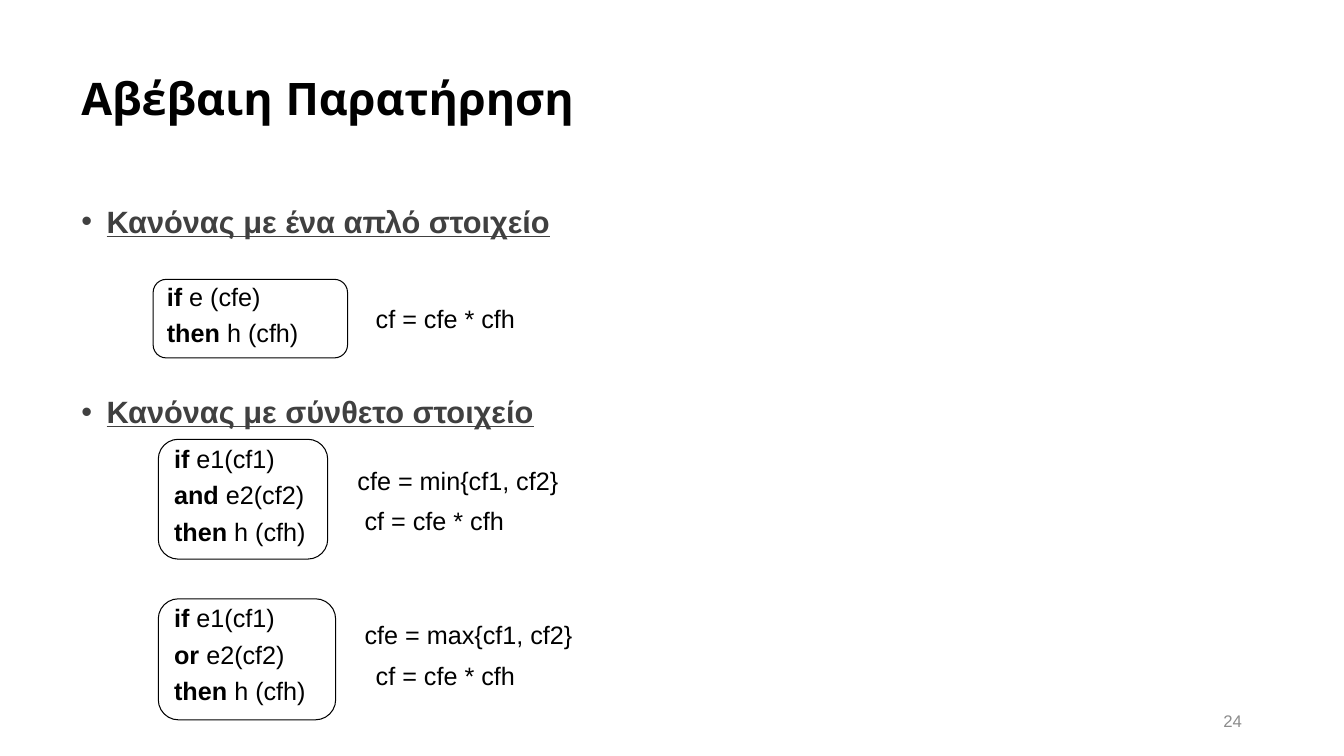
from dataclasses import dataclass

from lxml.etree import SubElement
from pptx import Presentation
from pptx.dml.color import RGBColor
from pptx.enum.shapes import MSO_SHAPE as Preset
from pptx.enum.text import MSO_ANCHOR as Anchor, PP_ALIGN as Align
from pptx.oxml.ns import qn
from pptx.slide import Slide
from pptx.text.text import TextFrame, _Paragraph as Paragraph
from pptx.util import Cm, Pt


@dataclass(frozen=True)
class Theme:
    title_font: str = "Montserrat"
    body_font: str = "Arial"
    ink: RGBColor = RGBColor(0, 0, 0)
    heading: RGBColor = RGBColor(0x40, 0x40, 0x40)
    muted: RGBColor = RGBColor(0x8C, 0x8C, 0x8C)
    title_size: float = 32
    heading_size: float = 22
    rule_size: float = 18
    number_size: float = 12


THEME = Theme()


@dataclass(frozen=True)
class Box:
    """Place and size in centimetres."""
    left: float
    top: float
    width: float
    height: float = 1.02

    def lengths(self) -> tuple[Cm, Cm, Cm, Cm]:
        return Cm(self.left), Cm(self.top), Cm(self.width), Cm(self.height)


@dataclass(frozen=True)
class Formula:
    text: str
    box: Box


@dataclass(frozen=True)
class Rule:
    """An if-then rule as (keyword, clause) lines, with its certainty formulas."""
    lines: tuple[tuple[str, str], ...]
    box: Box
    formulas: tuple[Formula, ...]


COMBINED = "cf = cfe * cfh"
CONCLUSION = ("then", "h (cfh)")
HEADINGS = ("Κανόνας με ένα απλό στοιχείο", "Κανόνας με σύνθετο στοιχείο")
RULES = (
    Rule((("if", "e (cfe)"), CONCLUSION), Box(3.86, 7.04, 4.9, 1.98),
         (Formula(COMBINED, Box(9.22, 7.52, 8.69)),)),
    Rule((("if", "e1(cf1)"), ("and", "e2(cf2)"), CONCLUSION),
         Box(3.99, 11.07, 4.27, 3.02),
         (Formula("cfe = min{cf1, cf2}", Box(8.76, 11.61, 5.79)),
          Formula(COMBINED, Box(8.94, 12.62, 4.52)))),
    Rule((("if", "e1(cf1)"), ("or", "e2(cf2)"), CONCLUSION),
         Box(3.99, 15.09, 4.47, 3.05),
         (Formula("cfe = max{cf1, cf2}", Box(8.94, 15.47, 5.89)),
          Formula(COMBINED, Box(9.22, 16.51, 4.1)))),
)


def add_text(paragraph: Paragraph, text: str, *, size: float = THEME.rule_size,
             color: RGBColor = THEME.ink, font: str = THEME.body_font,
             bold: bool = False, underline: bool = False) -> None:
    run = paragraph.add_run()
    run.text = text
    run.font.name = font
    run.font.size = Pt(size)
    run.font.color.rgb = color
    run.font.bold = bold
    run.font.underline = underline


def add_frame(slide: Slide, box: Box, anchor: Anchor = Anchor.TOP) -> TextFrame:
    frame = slide.shapes.add_textbox(*box.lengths()).text_frame
    frame.word_wrap = True
    frame.vertical_anchor = anchor
    return frame


def next_paragraph(frame: TextFrame, index: int) -> Paragraph:
    return frame.add_paragraph() if index else frame.paragraphs[0]


def add_bullet(paragraph: Paragraph) -> None:
    properties = paragraph._p.get_or_add_pPr()
    properties.set("marL", str(Cm(0.64)))
    properties.set("indent", str(-Cm(0.64)))
    SubElement(properties, qn("a:buFont")).set("typeface", THEME.body_font)
    SubElement(properties, qn("a:buChar")).set("char", "•")


def add_headings(slide: Slide) -> None:
    frame = add_frame(slide, Box(1.8, 5.08, 29.21, 12.09))
    for index, heading in enumerate(HEADINGS):
        paragraph = next_paragraph(frame, index)
        paragraph.line_spacing = 0.9
        paragraph.space_before = Pt(112 if index else 0)
        add_bullet(paragraph)
        add_text(paragraph, heading, size=THEME.heading_size,
                 color=THEME.heading, bold=True, underline=True)


def add_rule(slide: Slide, rule: Rule) -> None:
    outline = slide.shapes.add_shape(Preset.ROUNDED_RECTANGLE, *rule.box.lengths())
    outline.shadow.inherit = False
    outline.fill.background()
    outline.line.color.rgb = THEME.ink
    outline.line.width = Pt(0.75)
    frame = outline.text_frame
    frame.word_wrap = True
    frame.vertical_anchor = Anchor.TOP
    for index, (keyword, clause) in enumerate(rule.lines):
        paragraph = next_paragraph(frame, index)
        paragraph.alignment = Align.LEFT
        paragraph.line_spacing = 0.75
        paragraph.space_before = Pt(9.8 if index else 0)
        add_text(paragraph, f"{keyword} ", bold=True)
        add_text(paragraph, clause)
    for formula in rule.formulas:
        add_text(add_frame(slide, formula.box).paragraphs[0], formula.text)


def main() -> None:
    deck = Presentation()
    deck.slide_width, deck.slide_height = Cm(33.87), Cm(19.05)
    slide = deck.slides.add_slide(deck.slide_layouts[6])

    title = add_frame(slide, Box(1.8, 0.71, 29.21, 3.68), Anchor.MIDDLE).paragraphs[0]
    title.line_spacing = 0.9
    add_text(title, "Αβέβαιη Παρατήρηση", size=THEME.title_size,
             font=THEME.title_font, bold=True)

    add_headings(slide)
    for rule in RULES:
        add_rule(slide, rule)

    number = add_frame(slide, Box(23.93, 17.65, 7.62), Anchor.MIDDLE).paragraphs[0]
    number.alignment = Align.RIGHT
    add_text(number, "24", size=THEME.number_size, color=THEME.muted)

    deck.save("out.pptx")


if __name__ == "__main__":
    main()
